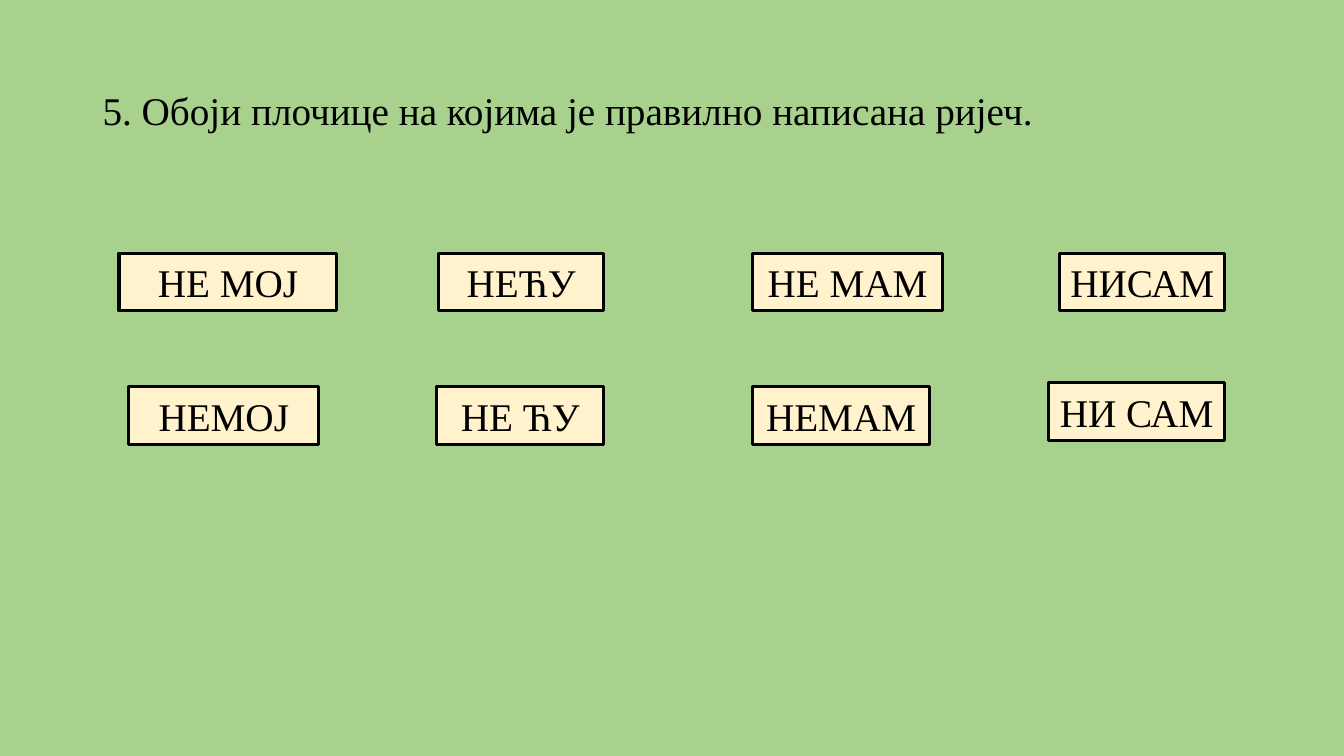
import pptx
import pptx.util
import pptx.dml.color
import pptx.enum.shapes
import pptx.enum.text

Cm = pptx.util.Cm


def color(value):
    return pptx.dml.color.RGBColor.from_string(value)


def add_text(para, text):
    span = para.add_run()
    span.text = text
    span.font.name = "Times New Roman"
    span.font.size = pptx.util.Pt(28)
    span.font.color.rgb = color("000000")


deck = pptx.Presentation()
deck.slide_width = Cm(33.87)
deck.slide_height = Cm(19.05)
page = deck.slides.add_slide(deck.slide_layouts[5])
page.background.fill.solid()
page.background.fill.fore_color.rgb = color("A9D18E")

title = page.shapes.title
title.left, title.top = Cm(2.33), Cm(1.01)
title.width, title.height = Cm(29.21), Cm(3.68)
title.text_frame.word_wrap = True
title.text_frame.vertical_anchor = pptx.enum.text.MSO_ANCHOR.MIDDLE
para = title.text_frame.paragraphs[0]
para.alignment = pptx.enum.text.PP_ALIGN.LEFT
para.line_spacing = 0.9
add_text(para, "5. Обоји плочице на којима је правилно написана ријеч.")

tiles = [
    ("НЕ МОЈ", 3, 6.38, 5.49),
    ("НЕЋУ", 11.05, 6.38, 4.17),
    ("НЕ МАМ", 18.97, 6.38, 4.78),
    ("НИСАМ", 26.7, 6.38, 4.17),
    ("НЕМОЈ", 3.25, 9.75, 4.78),
    ("НЕ ЋУ", 11, 9.75, 4.22),
    ("НЕМАМ", 18.97, 9.75, 4.45),
    ("НИ САМ", 26.42, 9.65, 4.45),
]
for word, left, top, width in tiles:
    tile = page.shapes.add_shape(
        pptx.enum.shapes.MSO_SHAPE.RECTANGLE, Cm(left), Cm(top), Cm(width), Cm(1.45)
    )
    tile.shadow.inherit = False
    tile.fill.solid()
    tile.fill.fore_color.rgb = color("FFF2CC")
    tile.line.color.rgb = color("000000")
    tile.line.width = pptx.util.Pt(2.25)
    frame = tile.text_frame
    frame.word_wrap = True
    frame.auto_size = pptx.enum.text.MSO_AUTO_SIZE.SHAPE_TO_FIT_TEXT
    frame.vertical_anchor = pptx.enum.text.MSO_ANCHOR.TOP
    frame.margin_left = frame.margin_right = Cm(0.2)
    para = frame.paragraphs[0]
    para.alignment = pptx.enum.text.PP_ALIGN.CENTER
    add_text(para, word)

deck.save("out.pptx")
